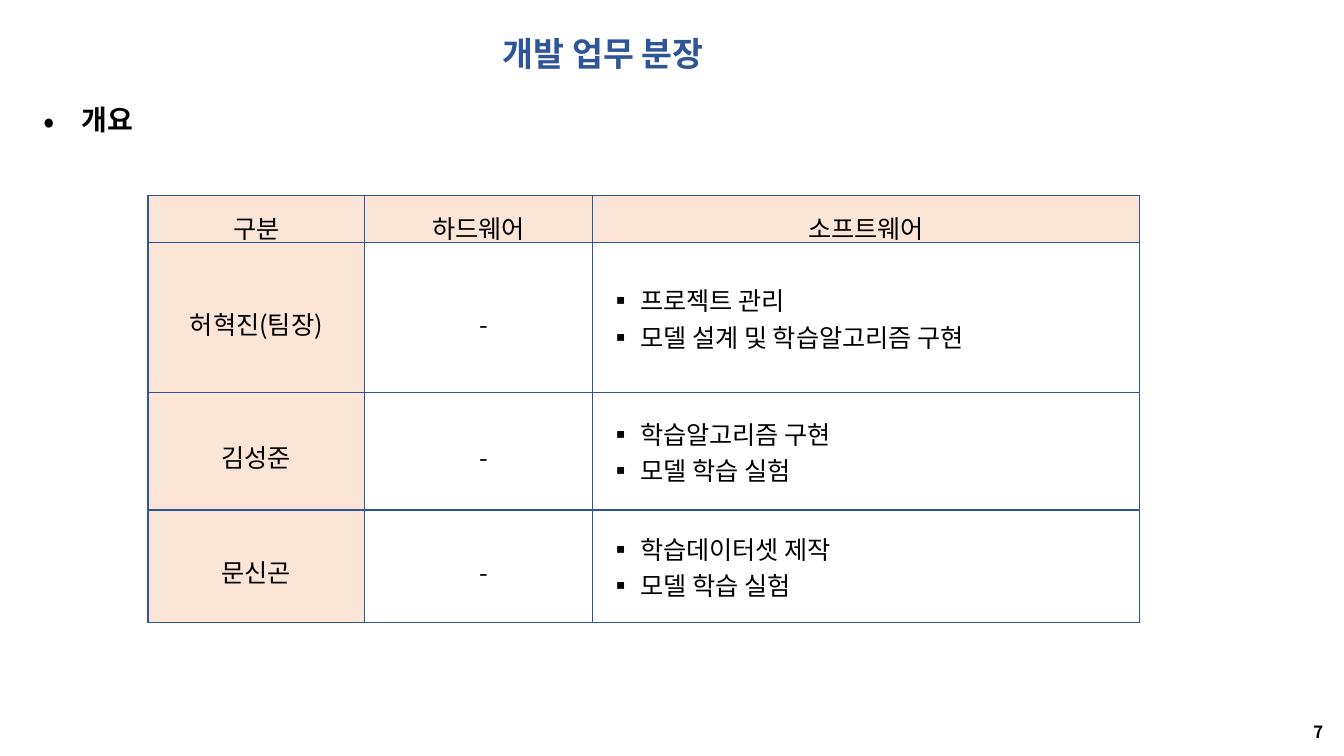
from dataclasses import dataclass

from lxml.etree import SubElement
from pptx import Presentation
from pptx.dml.color import RGBColor
from pptx.enum.text import MSO_ANCHOR, MSO_AUTO_SIZE, PP_ALIGN
from pptx.oxml.ns import qn
from pptx.util import Cm, Pt


@dataclass(frozen=True)
class Theme:
    """Colours, font and type sizes of the slide."""
    font: str = "Noto Sans CJK KR"
    ink: str = "000000"
    accent: str = "2F5597"
    label_fill: str = "FBE5D6"
    title_size: int = 24
    heading_size: int = 20
    table_size: int = 18
    number_size: int = 12
    border_width: int = 1


THEME = Theme()
HEADINGS = ["구분", "하드웨어", "소프트웨어"]
MEMBERS = [
    ("허혁진(팀장)", "-", ["프로젝트 관리", "모델 설계 및 학습알고리즘 구현"], 0),
    ("김성준", "-", ["학습알고리즘 구현", "모델 학습 실험"], 10),
    ("문신곤", "-", ["학습데이터셋 제작", "모델 학습 실험"], 6),
]
COLUMN_WIDTHS = [5.46, 5.74, 13.79]
ROW_HEIGHTS = [1.19, 3.78, 2.95, 2.84]


def place(part, box):
    """Move a part to the box (left, top, width, height) in centimetres."""
    part.left, part.top, part.width, part.height = (Cm(length) for length in box)


def write(paragraph, text, size, color=THEME.ink, bold=False, align=PP_ALIGN.CENTER,
          spacing=1.0, after=0):
    """Format a paragraph and add its one run."""
    paragraph.alignment = align
    paragraph.line_spacing = spacing
    paragraph.space_before = Pt(0)
    paragraph.space_after = Pt(after)
    run = paragraph.add_run()
    run.text = text
    run.font.size = Pt(size)
    run.font.bold = bold
    run.font.color.rgb = RGBColor.from_string(color)
    run.font.name = THEME.font
    SubElement(run.font._element, qn("a:ea"), typeface=THEME.font)


def indent(paragraph, left, first=0.0):
    """Set the left margin and first-line indent in centimetres."""
    properties = paragraph._p.get_or_add_pPr()
    properties.set("marL", str(Cm(left)))
    properties.set("indent", str(Cm(first)))
    return properties


def add_bullet(paragraph, symbol, left, hanging, percent=100):
    """Give a paragraph a hanging bullet."""
    properties = indent(paragraph, left, -hanging)
    SubElement(properties, qn("a:buSzPct"), val=str(percent * 1000))
    SubElement(properties, qn("a:buFont"), typeface=THEME.font)
    SubElement(properties, qn("a:buChar"), char=symbol)


def format_cell(cell, fill=None):
    """Set the margins, borders and fill of a table cell."""
    cell.vertical_anchor = MSO_ANCHOR.MIDDLE
    cell.margin_left = cell.margin_right = Cm(0.13)
    cell.margin_top = cell.margin_bottom = Cm(0.08)
    properties = cell._tc.get_or_add_tcPr()
    for side in ("a:lnL", "a:lnR", "a:lnT", "a:lnB"):
        border = SubElement(properties, qn(side), w=str(Pt(THEME.border_width)))
        border_fill = SubElement(border, qn("a:solidFill"))
        SubElement(border_fill, qn("a:srgbClr"), val=THEME.accent)
    if fill:
        cell.fill.solid()
        cell.fill.fore_color.rgb = RGBColor.from_string(fill)
    else:
        cell.fill.background()


def build_title(slide, box):
    """Fill the title placeholder."""
    title = slide.shapes.title
    place(title, box)
    frame = title.text_frame
    frame.auto_size = MSO_AUTO_SIZE.NONE
    frame.vertical_anchor = MSO_ANCHOR.MIDDLE
    write(frame.paragraphs[0], "개발 업무 분장", THEME.title_size, THEME.accent, True,
          spacing=0.9)


def build_overview(slide, box):
    """Fill the body placeholder with the section heading."""
    overview = slide.placeholders[1]
    place(overview, box)
    frame = overview.text_frame
    frame.auto_size = MSO_AUTO_SIZE.NONE
    frame.vertical_anchor = MSO_ANCHOR.TOP
    heading = frame.paragraphs[0]
    add_bullet(heading, "•", 1.55, 0.97, 120)
    write(heading, "개요", THEME.heading_size, bold=True, align=PP_ALIGN.LEFT,
          spacing=0.9, after=10)


def build_assignments(slide, left, top):
    """Add the table of members and their tasks."""
    rows, columns = len(ROW_HEIGHTS), len(COLUMN_WIDTHS)
    table = slide.shapes.add_table(rows, columns, Cm(left), Cm(top),
                                   Cm(sum(COLUMN_WIDTHS)), Cm(sum(ROW_HEIGHTS))).table
    table.first_row = table.horz_banding = False
    for column, width in zip(table.columns, COLUMN_WIDTHS):
        column.width = Cm(width)
    for row, height in zip(table.rows, ROW_HEIGHTS):
        row.height = Cm(height)

    for column, heading in enumerate(HEADINGS):
        cell = table.cell(0, column)
        format_cell(cell, THEME.label_fill)
        write(cell.text_frame.paragraphs[0], heading, THEME.table_size, spacing=1.3)

    for row, (member, hardware, tasks, after) in enumerate(MEMBERS, 1):
        member_cell, hardware_cell, software_cell = table.rows[row].cells
        format_cell(member_cell, THEME.label_fill)
        write(member_cell.text_frame.paragraphs[0], member, THEME.table_size, spacing=1.3)

        format_cell(hardware_cell)
        hardware_line = hardware_cell.text_frame.paragraphs[0]
        indent(hardware_line, 0.28)
        write(hardware_line, hardware, THEME.table_size, spacing=1.3, after=after)

        format_cell(software_cell)
        frame = software_cell.text_frame
        for position, task in enumerate(tasks):
            task_line = frame.add_paragraph() if position else frame.paragraphs[0]
            add_bullet(task_line, "▪", 1.07, 0.79)
            write(task_line, task, THEME.table_size, align=PP_ALIGN.LEFT)


def build_page_number(slide, box):
    """Add the page number in the bottom corner."""
    frame = slide.shapes.add_textbox(*(Cm(length) for length in box)).text_frame
    frame.word_wrap = True
    frame.vertical_anchor = MSO_ANCHOR.MIDDLE
    write(frame.paragraphs[0], "7", THEME.number_size, bold=True)


def main():
    """Build and save the slide."""
    deck = Presentation()
    deck.slide_width, deck.slide_height = Cm(33.87), Cm(19.05)
    slide = deck.slides.add_slide(deck.slide_layouts[1])
    build_page_number(slide, (32.49, 18.01, 1.47, 0.84))
    build_overview(slide, (0.25, 2.54, 32.64, 5.46))
    build_title(slide, (1.09, 0.51, 28.22, 1.78))
    build_assignments(slide, 3.73, 4.93)
    deck.save("out.pptx")


if __name__ == "__main__":
    main()
